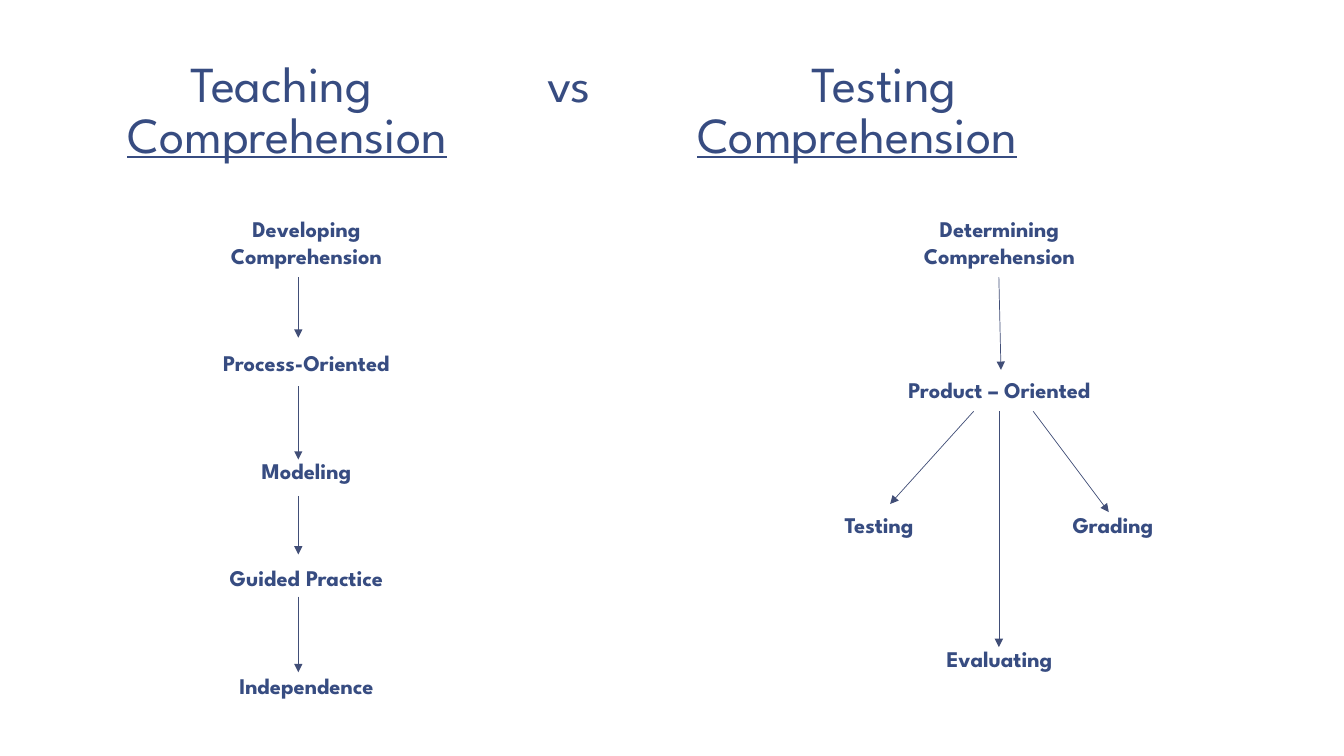
from pptx import Presentation
from pptx.dml.color import RGBColor
from pptx.enum.shapes import MSO_CONNECTOR
from pptx.enum.text import MSO_ANCHOR, PP_ALIGN
from pptx.oxml.ns import qn
from pptx.util import Pt
from lxml import etree

STRAIGHT = MSO_CONNECTOR.STRAIGHT
BOTTOM = MSO_ANCHOR.BOTTOM
CENTER = PP_ALIGN.CENTER

FONT = "League Spartan"
COLORS = {"text": "374C81", "arrow": "414E77", "background": "FFFFFF"}

TITLE_BOX = (47.5, 19.4, 835.9, 143.3)
TITLE_LINES = [
    ("\tTeaching\tvs\tTesting", (79, 334, 523), 36, False),
    ("\tComprehension\tComprehension", (34, 441), 36, True),
    ("\t", (9.5,), 39.6, True),
]

TEACHING_X, TESTING_X = 218.9, 713.9
FIRST_ROW_Y, ROW_HEIGHT = 150, 19.2
LABEL_WIDTH, LABEL_INSET = 180, 3.6
LABELS = [
    (["Developing", "Comprehension"], TEACHING_X, 0),
    (["Process-Oriented"], TEACHING_X, 5),
    (["Modeling"], TEACHING_X, 9),
    (["Guided Practice"], TEACHING_X, 13),
    (["Independence"], TEACHING_X, 17),
    (["Determining", "Comprehension"], TESTING_X, 0),
    (["Product – Oriented"], TESTING_X, 6),
    (["Testing"], 628, 11),
    (["Grading"], 795, 11),
    (["Evaluating"], TESTING_X, 16),
]

TEACHING_ARROW_X = 213.1
TEACHING_ARROWS = [(198, 241.2), (275.8, 328.3), (354.2, 396), (426.2, 480.2)]
TESTING_ARROWS = [
    (713.5, 198, 715, 264.2),
    (713.5, 293.8, 713.5, 462.2),
    (695.5, 293.8, 635.8, 360),
    (738, 293.8, 792, 365.8),
]


def style(p, size, bold=False, underline=False):
    p.font.name = FONT
    p.font.size = Pt(size)
    p.font.bold = bold
    p.font.underline = underline
    p.font.color.rgb = RGBColor.from_string(COLORS["text"])


def add_box(slide, x, y, width, height, inset_x, inset_y):
    tf = slide.shapes.add_textbox(Pt(x), Pt(y), Pt(width), Pt(height)).text_frame
    tf.word_wrap = True
    tf.margin_left = tf.margin_right = Pt(inset_x)
    tf.margin_top = tf.margin_bottom = Pt(inset_y)
    return tf


def add_title(slide):
    tf = add_box(slide, *TITLE_BOX, 9.4, 5)
    tf.vertical_anchor = BOTTOM
    tf.text = "\n".join(line[0] for line in TITLE_LINES)
    for p, (_, stops, size, underline) in zip(tf.paragraphs, TITLE_LINES):
        p.line_spacing = 0.85
        tabs = etree.SubElement(p._p.get_or_add_pPr(), qn("a:tabLst"))
        for stop in stops:
            etree.SubElement(tabs, qn("a:tab"), pos=str(Pt(stop)), algn="l")
        style(p, size, underline=underline)


def add_label(slide, lines, center, row):
    height = len(lines) * ROW_HEIGHT + 2 * LABEL_INSET
    tf = add_box(slide, center - LABEL_WIDTH / 2, FIRST_ROW_Y + row * ROW_HEIGHT,
                 LABEL_WIDTH, height, 2 * LABEL_INSET, LABEL_INSET)
    tf.text = "\n".join(lines)
    for p in tf.paragraphs:
        p.alignment = CENTER
        style(p, 16, bold=True)


def add_arrow(slide, x1, y1, x2, y2):
    arrow = slide.shapes.add_connector(STRAIGHT, Pt(x1), Pt(y1), Pt(x2), Pt(y2))
    arrow.line.width = Pt(0.5)
    arrow.line.color.rgb = RGBColor.from_string(COLORS["arrow"])
    etree.SubElement(arrow.line._get_or_add_ln(), qn("a:tailEnd"), type="triangle")
    etree.SubElement(arrow._element.spPr, qn("a:effectLst"))


def main():
    prs = Presentation()
    prs.slide_width, prs.slide_height = Pt(960), Pt(540)
    slide = prs.slides.add_slide(prs.slide_layouts[6])
    fill = slide.background.fill
    fill.solid()
    fill.fore_color.rgb = RGBColor.from_string(COLORS["background"])

    add_title(slide)
    for label in LABELS:
        add_label(slide, *label)
    for top, bottom in TEACHING_ARROWS:
        add_arrow(slide, TEACHING_ARROW_X, top, TEACHING_ARROW_X, bottom)
    for arrow in TESTING_ARROWS:
        add_arrow(slide, *arrow)
    prs.save("out.pptx")


if __name__ == "__main__":
    main()
